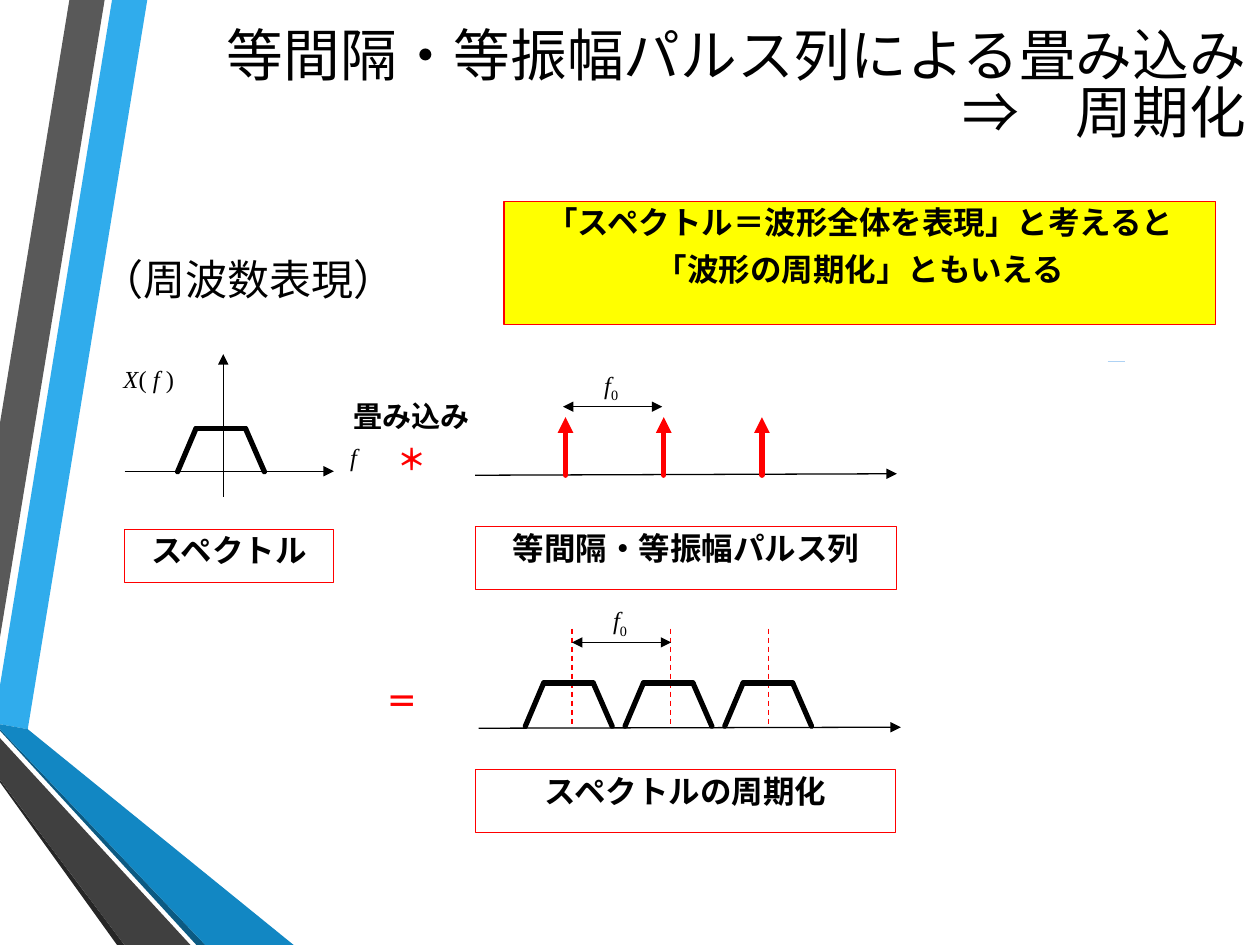
import dataclasses

import lxml.etree
import pptx
import pptx.dml.color
import pptx.enum.dml
import pptx.enum.shapes
import pptx.enum.text
import pptx.oxml.ns
import pptx.util

Cm = pptx.util.Cm
Pt = pptx.util.Pt
ALIGN = pptx.enum.text.PP_ALIGN
PITCH = 1.98


@dataclasses.dataclass(frozen=True)
class Theme:
    """Colours, fonts and type sizes of the slide."""
    ink: str = "000000"
    red: str = "FF0000"
    note: str = "FFFF00"
    pale: str = "AED2F4"
    sky: str = "30ACEC"
    blue: str = "1287C3"
    deep: str = "0C5A82"
    grey: str = "595959"
    dark: str = "404040"
    coal: str = "262626"
    serif: str = "Times New Roman"
    sans: str = "Calibri"
    kanji: str = "Noto Sans CJK JP"
    title: float = 32.4
    head: float = 24
    text: float = 18
    sign: float = 16.6
    math: float = 14
    thin: float = 0.75
    thick: float = 3


T = Theme()


def color(code):
    """Turn a hex code into a colour."""
    return pptx.dml.color.RGBColor.from_string(code)


def add(parent, name, **attrs):
    """Append a drawing element with its attributes."""
    node = lxml.etree.SubElement(parent, pptx.oxml.ns.qn(name))
    for key, value in attrs.items():
        node.set(key, value)


def put_run(para, text, size, tint=T.ink, bold=False, slant=False, font=T.serif, base=0):
    """Add one formatted run to a paragraph."""
    run = para.add_run()
    run.text = text
    run.font.size = Pt(size)
    run.font.bold = bold
    run.font.italic = slant
    run.font.color.rgb = color(tint)
    run.font.name = font
    props = run.font._element
    add(props, "a:ea", typeface=T.kanji)
    if base:
        props.set("baseline", str(base * 1000))


def put_text(shape, rows, align=ALIGN.CENTER):
    """Fill a shape with rows, each a list of run settings."""
    frame = shape.text_frame
    frame.word_wrap = True
    frame.vertical_anchor = pptx.enum.text.MSO_ANCHOR.TOP
    for i, row in enumerate(rows):
        para = frame.add_paragraph() if i else frame.paragraphs[0]
        para.alignment = align
        para.line_spacing = 0.9
        para.space_before = Pt(1)
        para.space_after = Pt(6)
        for spec in row:
            put_run(para, **spec)


def put_box(slide, box, rows, align=ALIGN.CENTER):
    """Add a plain text box."""
    shape = slide.shapes.add_textbox(*map(Cm, box))
    put_text(shape, rows, align)
    return shape


def put_math(slide, box, row):
    """Add a formula made of runs."""
    row = [dict(size=T.math, **part) for part in row]
    put_box(slide, box, [row], ALIGN.LEFT).text_frame.margin_right = 0


def put_tag(slide, box, lines, fill=None):
    """Add a red-edged box with bold lines."""
    kind = pptx.enum.shapes.MSO_SHAPE.RECTANGLE
    shape = slide.shapes.add_shape(kind, *map(Cm, box))
    shape.shadow.inherit = False
    if fill:
        shape.fill.solid()
        shape.fill.fore_color.rgb = color(fill)
    else:
        shape.fill.background()
    shape.line.color.rgb = color(T.red)
    shape.line.width = Pt(T.thin)
    put_text(shape, [[dict(text=line, size=T.text, bold=True)] for line in lines])


def put_line(slide, start, end, tint=T.ink, width=T.thin, head=False, tail=False, dash=False):
    """Add a straight line, with arrowheads or dashes if asked."""
    kind = pptx.enum.shapes.MSO_CONNECTOR.STRAIGHT
    link = slide.shapes.add_connector(kind, *map(Cm, start + end))
    link.line.color.rgb = color(tint)
    link.line.width = Pt(width)
    if dash:
        link.line.dash_style = pptx.enum.dml.MSO_LINE.DASH
    edge = link.line._get_or_add_ln()
    if width == T.thick:
        edge.set("cap", "rnd")
    if head:
        add(edge, "a:headEnd", type="triangle")
    if tail:
        add(edge, "a:tailEnd", type="triangle")
    add(link._element.spPr, "a:effectLst")


def put_hump(slide, x, y):
    """Draw the three thick sides of one spectrum."""
    dots = [(x, y + 0.87), (x + 0.37, y), (x + 1.37, y), (x + 1.75, y + 0.87)]
    for start, end in zip(dots, dots[1:]):
        put_line(slide, start, end, width=T.thick)


def put_gap(slide, x, y):
    """Mark one period with an arrow and its symbol."""
    put_math(slide, (x + 0.58, y, 1.17, 0.99),
             [dict(text="f", slant=True), dict(text="0", base=-25)])
    put_line(slide, (x, y + 0.86), (x + 2, y + 0.86), head=True, tail=True)


def ribbons(slide, box):
    """Draw the folded bands at the left edge."""
    left, top, wide, foot = box
    bands = [
        (T.sky, [(0, 13.82), (0, 14.6), (0.56, 14.7), (2.97, 0), (2.26, 0)]),
        (T.grey, [(2.11, 0), (1.4, 0), (0, 8.53), (0, 12.85)]),
        (T.coal, [(0, 15.72), (0, 15.77), (2.36, foot), (2.51, foot)]),
        (T.deep, [(0, 14.7), (0, 14.73), (3.96, foot), (4.14, foot)]),
        (T.blue, [(0, 14.7), (4.14, foot), (wide, foot), (0.56, 14.7), (0, 14.6)]),
        (T.dark, [(0, 15.72), (2.51, foot), (3.84, foot), (0, 14.88)]),
    ]
    for tint, dots in bands:
        dots = [(Cm(left + x), Cm(top + y)) for x, y in dots]
        pen = slide.shapes.build_freeform(*dots[0])
        pen.add_line_segments(dots[1:], close=True)
        shape = pen.convert_to_shape()
        shape.shadow.inherit = False
        shape.fill.solid()
        shape.fill.fore_color.rgb = color(tint)
        shape.line.fill.background()


def header(slide, box):
    """Place and format the title."""
    title = slide.shapes.title
    title.left, title.top, title.width, title.height = map(Cm, box)
    frame = title.text_frame
    frame.word_wrap = True
    frame.vertical_anchor = pptx.enum.text.MSO_ANCHOR.MIDDLE
    para = frame.paragraphs[0]
    para.alignment = ALIGN.RIGHT
    para.line_spacing = 0.83
    put_run(para, "等間隔・等振幅パルス列による畳み込み", T.title, font=T.sans)
    para.add_line_break()
    put_run(para, "⇒　周期化", T.title, font=T.sans)


def remark(slide, box):
    """Place the yellow remark and the short rule below it."""
    x, y, wide, high = box
    put_tag(slide, box, ["「スペクトル＝波形全体を表現」と考えると", "「波形の周期化」ともいえる"], T.note)
    base = y + high + 0.74
    put_line(slide, (x + 12.17, base), (x + 12.52, base), T.pale)


def single(slide, box):
    """Draw the axes and the single spectrum."""
    x, y, wide, high = box
    put_line(slide, (x + 0.27, y + 2.36), (x + 4.49, y + 2.36), tail=True)
    put_line(slide, (x + 2.26, y + 2.87), (x + 2.26, y), tail=True)
    put_hump(slide, x + 1.34, y + 1.5)
    put_math(slide, (x + 4.57, y + 1.72, 0.48, 0.99), [dict(text="f", slant=True)])
    put_math(slide, (x, y + 0.15, 1.75, 0.99),
             [dict(text="X", slant=True), dict(text="( "),
              dict(text="f ", slant=True), dict(text=")")])
    put_tag(slide, (x + 0.27, y + high - 1.07, 4.22, 1.07), ["スペクトル"])


def train(slide, box):
    """Draw the row of equal pulses."""
    x, y, wide, high = box
    put_line(slide, (x, y + 2.24), (x + wide, y + 2.21), tail=True)
    for i in range(3):
        mid = x + 1.82 + i * PITCH
        put_line(slide, (mid, y + 2.24), (mid, y + 1.07), T.red, T.thick, tail=True)
    put_gap(slide, x + 1.77, y)
    put_tag(slide, (x, y + high - 1.27, wide, 1.27), ["等間隔・等振幅パルス列"])


def series(slide, box):
    """Draw the repeated spectra."""
    x, y, wide, high = box
    put_line(slide, (x + 0.07, y + 2.59), (x + wide + 0.1, y + 2.57), tail=True)
    for i in range(3):
        mid = x + 1.95 + i * PITCH
        put_line(slide, (mid, y + 0.58), (mid, y + 2.57), T.red, dash=True)
        put_hump(slide, x + 1.01 + i * 2.01, y + 1.68)
    put_gap(slide, x + 1.95, y)
    put_tag(slide, (x, y + high - 1.27, wide, 1.27), ["スペクトルの周期化"])


def main():
    """Build the slide and save it."""
    deck = pptx.Presentation()
    deck.slide_width, deck.slide_height = Cm(25.4), Cm(19.05)
    slide = deck.slides.add_slide(deck.slide_layouts[5])
    ribbons(slide, (0, 0, 5.92, 19.05))
    header(slide, (2.97, 0.36, 22.4, 2.84))
    put_box(slide, (1.8, 5.11, 7.04, 1.24),
            [[dict(text="（周波数表現）", size=T.head)]], ALIGN.LEFT)
    remark(slide, (10.16, 4.06, 14.35, 2.49))
    single(slide, (2.24, 7.14, 5.05, 4.6))
    put_box(slide, (6.78, 7.98, 3.05, 2.57),
            [[dict(text="畳み込み", size=T.sign, bold=True)],
             [dict(text="＊", size=T.sign, bold=True, tint=T.red)]])
    train(slide, (9.58, 7.34, 8.5, 4.55))
    put_box(slide, (6.58, 13.72, 3.05, 0.99),
            [[dict(text="＝", size=T.text, bold=True, tint=T.red, font=T.kanji)]])
    series(slide, (9.58, 12.09, 8.48, 4.7))
    deck.save("out.pptx")


if __name__ == "__main__":
    main()
